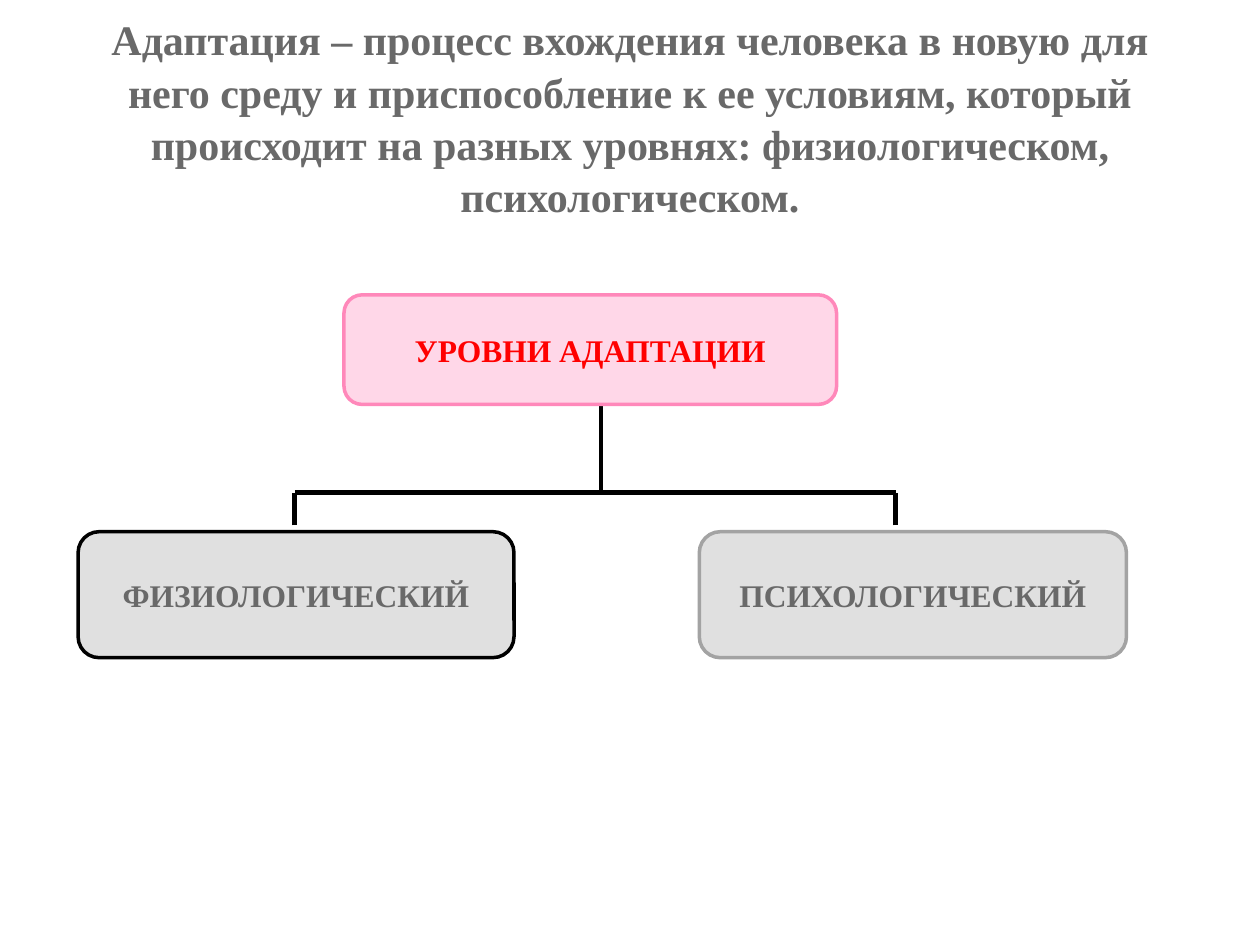
from lxml import etree
from pptx import Presentation
from pptx.dml.color import RGBColor
from pptx.enum.shapes import MSO_CONNECTOR, MSO_SHAPE
from pptx.enum.text import MSO_ANCHOR, MSO_AUTO_SIZE, PP_ALIGN
from pptx.oxml.ns import qn
from pptx.util import Inches, Pt

ROUNDED = MSO_SHAPE.ROUNDED_RECTANGLE
STRAIGHT = MSO_CONNECTOR.STRAIGHT
MIDDLE = MSO_ANCHOR.MIDDLE
CENTER = PP_ALIGN.CENTER
NO_AUTOFIT = MSO_AUTO_SIZE.NONE

FONT = "Times New Roman"
COLORS = {
    "text": "696969",
    "accent": "FF0000",
    "black": "000000",
    "gray": "E0E0E0",
    "gray_edge": "A3A3A3",
    "pink": "FFD7E8",
    "pink_edge": "FF88BA",
}
TITLE = (
    "Адаптация – процесс вхождения человека в новую для него среду "
    "и приспособление к ее условиям, который происходит на разных "
    "уровнях: физиологическом, психологическом."
)
TITLE_BOX = (0.5, 0.3, 9, 1.25)
BOXES = [
    ("ФИЗИОЛОГИЧЕСКИЙ", (0.62, 4.22, 3.46, 1), "gray", "black", "text"),
    ("ПСИХОЛОГИЧЕСКИЙ", (5.55, 4.22, 3.39, 1), "gray", "gray_edge", "text"),
    ("УРОВНИ АДАПТАЦИИ", (2.73, 2.34, 3.91, 0.87), "pink", "pink_edge", "accent"),
]
TRUNK_X, TRUNK_TOP = 4.77, 3.2
BRANCH_Y, BRANCH_BOTTOM = 3.91, 4.17
BRANCH_XS = (2.34, 7.11)


def color(name):
    return RGBColor.from_string(COLORS[name])


def set_text(shape, text, size, color_name):
    frame = shape.text_frame
    frame.text = text
    frame.word_wrap = True
    frame.auto_size = NO_AUTOFIT
    frame.vertical_anchor = MIDDLE
    paragraph = frame.paragraphs[0]
    paragraph.alignment = CENTER
    font = paragraph.runs[0].font
    font.name = FONT
    font.size = Pt(size)
    font.bold = True
    font.color.rgb = color(color_name)
    return paragraph


def add_line(slide, start, end, width):
    connector = slide.shapes.add_connector(STRAIGHT, *map(Inches, start + end))
    connector.line.color.rgb = color("black")
    connector.line.width = Pt(width)
    etree.SubElement(connector._element.spPr, qn("a:effectLst"))


def add_box(slide, text, place, fill, edge, text_color):
    box = slide.shapes.add_shape(ROUNDED, *map(Inches, place))
    box.shadow.inherit = False
    box.fill.solid()
    box.fill.fore_color.rgb = color(fill)
    box.line.color.rgb = color(edge)
    box.line.width = Pt(2)
    set_text(box, text, 18, text_color)


def main():
    presentation = Presentation()
    presentation.slide_width, presentation.slide_height = Inches(10), Inches(7.5)
    slide = presentation.slides.add_slide(presentation.slide_layouts[5])

    title = slide.shapes.title
    title.left, title.top, title.width, title.height = map(Inches, TITLE_BOX)
    set_text(title, TITLE, 24, "text").line_spacing = 1.04

    add_line(slide, (TRUNK_X, TRUNK_TOP), (TRUNK_X, BRANCH_Y), 2.25)
    left, right = BRANCH_XS
    add_line(slide, (left, BRANCH_Y), (right, BRANCH_Y), 3)
    for x in BRANCH_XS:
        add_line(slide, (x, BRANCH_BOTTOM), (x, BRANCH_Y), 3)
    for box in BOXES:
        add_box(slide, *box)

    presentation.save("out.pptx")


if __name__ == "__main__":
    main()
